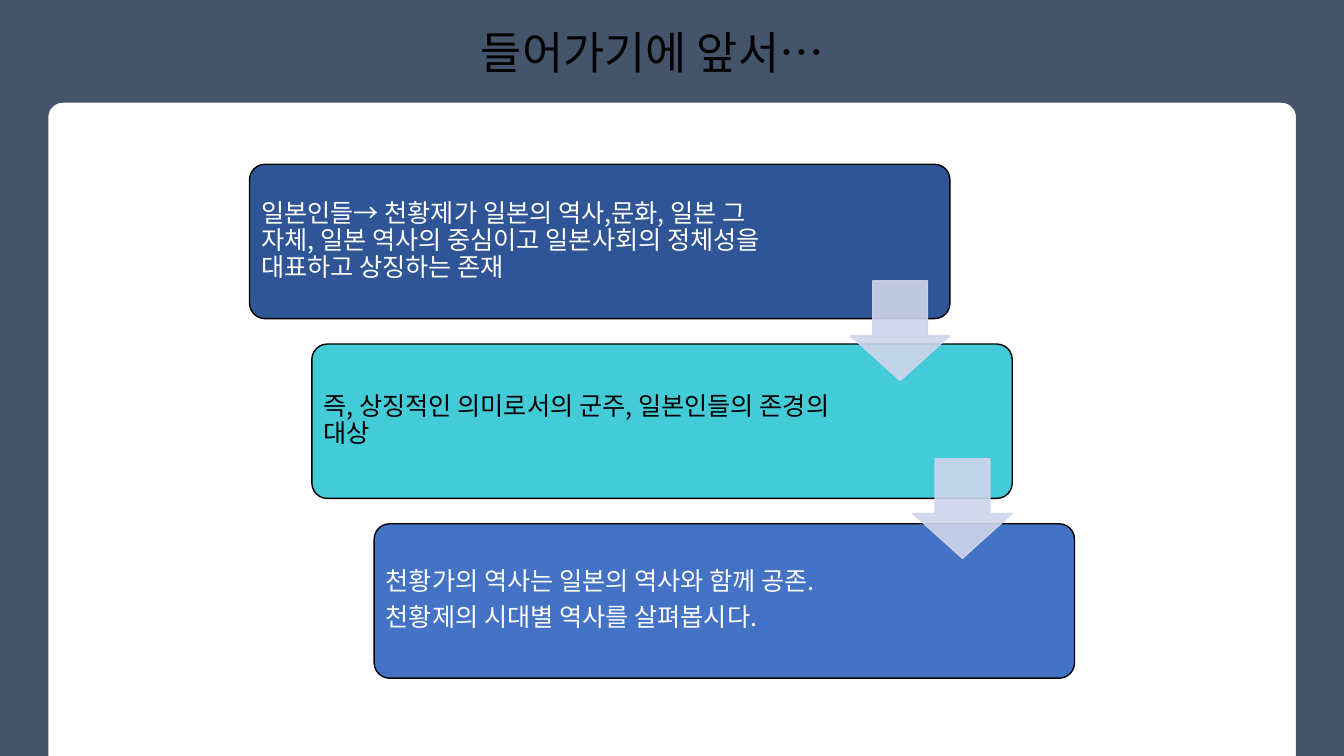
from math import cos, radians, sin

from lxml.etree import SubElement
from pptx import Presentation
from pptx.dml.color import RGBColor
from pptx.enum.shapes import MSO_SHAPE
from pptx.enum.text import MSO_ANCHOR, PP_ALIGN
from pptx.oxml.ns import qn
from pptx.util import Cm, Pt

FONT = "Noto Sans CJK KR"
WIDE, HIGH = 33.87, 19.05
HUES = {
    "frame": "44546A",
    "navy": "2F5597",
    "teal": "43CBD7",
    "blue": "4472C4",
    "arrow": "CFD5EA",
    "black": "000000",
    "white": "FFFFFF",
}
STEPS = [
    ("navy", "white", 13.49, ["일본인들→ 천황제가 일본의 역사,문화, 일본 그 자체, 일본 역사의 중심이고 "
                              "일본사회의 정체성을 대표하고 상징하는 존재"]),
    ("teal", "black", 13.36, ["즉, 상징적인 의미로서의 군주, 일본인들의 존경의 대상"]),
    ("blue", "white", 13.36, ["천황가의 역사는 일본의 역사와 함께 공존.",
                              "천황제의 시대별 역사를 살펴봅시다."]),
]


def color(key):
    """Return the named colour."""
    return RGBColor.from_string(HUES[key])


def paint(shape, fill, line=None):
    """Give a shape a flat fill and an optional thin line."""
    shape.shadow.inherit = False
    shape.fill.solid()
    shape.fill.fore_color.rgb = color(fill)
    if line:
        shape.line.color.rgb = color(line)
        shape.line.width = Pt(1)
    else:
        shape.line.fill.background()


def style(para, size, hue):
    """Set the font of a paragraph for Latin and Korean letters."""
    font = para.font
    font.name, font.size = FONT, Pt(size)
    font.color.rgb = color(hue)
    base = para._p.pPr.find(qn("a:defRPr"))
    SubElement(base, qn("a:ea"), typeface=FONT)


def add_text(slide, area, lines, size, hue):
    """Add a wrapped text box and return its frame."""
    frame = slide.shapes.add_textbox(*map(Cm, area)).text_frame
    frame.word_wrap = True
    frame.text = "\n".join(lines)
    for para in frame.paragraphs:
        style(para, size, hue)
    return frame


def add_frame(slide):
    """Draw the dark border around the round-topped page."""
    left, right, top, curve = 1.22, 32.66, 2.59, 0.36

    def arc(mid, start):
        """Return the points of a quarter turn."""
        turns = [radians(start - step) for step in range(0, 91, 10)]
        return [(mid + curve * cos(t), top + curve - curve * sin(t)) for t in turns]

    right_arc = arc(right - curve, 90)[::-1]
    left_arc = arc(left + curve, 180)[::-1]
    points = [(WIDE, 0), (WIDE, HIGH), (right, HIGH), *right_arc,
              *left_arc, (left, HIGH), (0, HIGH)]
    path = slide.shapes.build_freeform(0, 0)
    path.add_line_segments([(Cm(x), Cm(y)) for x, y in points], close=True)
    paint(path.convert_to_shape(), "frame")


def add_step(slide, index, fill, hue, width, lines):
    """Add one round box of the stairs with its text."""
    left, top = 6.29 + 1.57 * index, 4.14 + 4.53 * index
    box = slide.shapes.add_shape(
        MSO_SHAPE.ROUNDED_RECTANGLE, Cm(left), Cm(top), Cm(17.65), Cm(3.89))
    box.adjustments[0] = 0.1
    paint(box, fill, "black")
    frame = add_text(slide, (left + 0.11, top + 0.11, width, 3.66), lines, 18, hue)
    frame.vertical_anchor = MSO_ANCHOR.MIDDLE
    frame.margin_left = frame.margin_right = Cm(0.18)
    frame.margin_top = frame.margin_bottom = Cm(0.18)
    for para in frame.paragraphs:
        para.line_spacing = 0.9
        para.space_after = Pt(6.3)


def add_arrow(slide, index):
    """Add a faintly clear arrow down to the next box."""
    arrow = slide.shapes.add_shape(
        MSO_SHAPE.DOWN_ARROW, Cm(21.43 + 1.57 * index), Cm(7.08 + 4.48 * index),
        Cm(2.51), Cm(2.51))
    arrow.adjustments[0], arrow.adjustments[1] = 0.55, 0.45
    paint(arrow, "arrow", "arrow")
    for tone in arrow._element.spPr.iter(qn("a:srgbClr")):
        SubElement(tone, qn("a:alpha"), val="90000")


def main():
    """Build the slide and save it."""
    deck = Presentation()
    deck.slide_width, deck.slide_height = Cm(WIDE), Cm(HIGH)
    slide = deck.slides.add_slide(deck.slide_layouts[6])
    add_frame(slide)
    title = add_text(slide, (10.85, 0.51, 11.2, 1.63), ["들어가기에 앞서…"], 32, "black")
    title.paragraphs[0].alignment = PP_ALIGN.CENTER
    for index, step in enumerate(STEPS):
        add_step(slide, index, *step)
    for index in range(len(STEPS) - 1):
        add_arrow(slide, index)
    deck.save("out.pptx")


if __name__ == "__main__":
    main()
